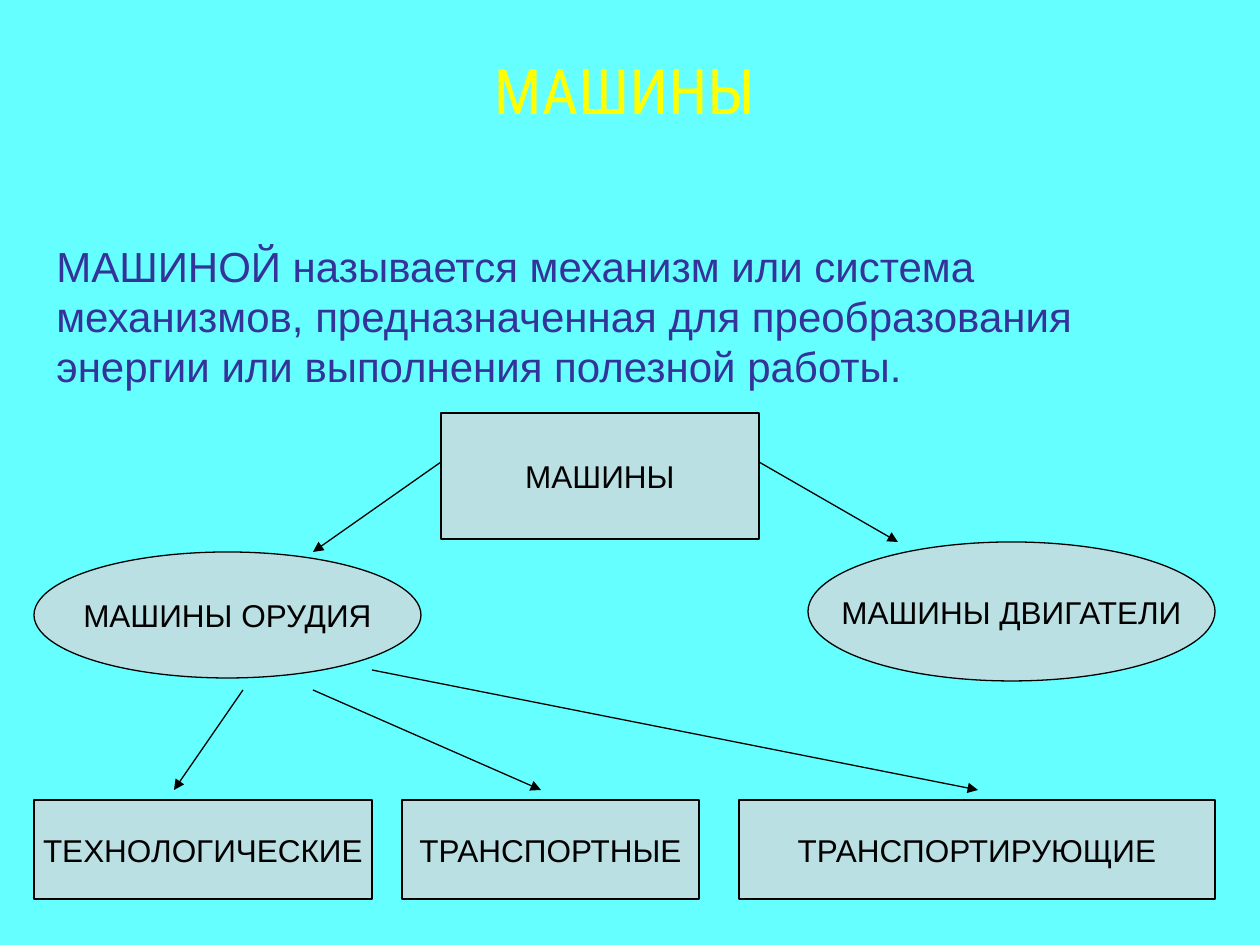
from dataclasses import dataclass

from lxml import etree
from pptx import Presentation
from pptx.dml.color import RGBColor
from pptx.enum.shapes import MSO_CONNECTOR, MSO_SHAPE
from pptx.enum.text import MSO_ANCHOR, PP_ALIGN
from pptx.oxml.ns import qn
from pptx.util import Emu, Pt

RECT = MSO_SHAPE.RECTANGLE
OVAL = MSO_SHAPE.OVAL
STRAIGHT = MSO_CONNECTOR.STRAIGHT
TOP = MSO_ANCHOR.TOP
MIDDLE = MSO_ANCHOR.MIDDLE
LEFT = PP_ALIGN.LEFT
CENTER = PP_ALIGN.CENTER

EMU_PER_PX = 914400 / 126
COLORS = {
    "background": "66FFFF",
    "title": "FFFF00",
    "definition": "333399",
    "node": "BBE0E3",
    "ink": "000000",
}
BODY_FONT = "Arial"
TITLE_FONT = "Roboto Condensed"
LINE_WIDTH = Pt(0.75)
ROW_TOP, ROW_HEIGHT = 800, 99


@dataclass(frozen=True)
class Node:
    text: str
    shape: MSO_SHAPE
    x: int
    y: int
    w: int
    h: int


@dataclass(frozen=True)
class Arrow:
    x1: int
    y1: int
    x2: int
    y2: int


NODES = [
    Node("МАШИНЫ", RECT, 441, 413, 318, 126),
    Node("МАШИНЫ ОРУДИЯ", OVAL, 34, 552, 387, 126),
    Node("МАШИНЫ ДВИГАТЕЛИ", OVAL, 808, 542, 407, 139),
    Node("ТЕХНОЛОГИЧЕСКИЕ", RECT, 34, ROW_TOP, 338, ROW_HEIGHT),
    Node("ТРАНСПОРТНЫЕ", RECT, 402, ROW_TOP, 297, ROW_HEIGHT),
    Node("ТРАНСПОРТИРУЮЩИЕ", RECT, 739, ROW_TOP, 476, ROW_HEIGHT),
]
ARROWS = [
    Arrow(441, 462, 313, 552),
    Arrow(759, 462, 898, 542),
    Arrow(243, 690, 174, 790),
    Arrow(313, 690, 541, 790),
    Arrow(372, 670, 978, 790),
]


def px(value: int) -> Emu:
    return Emu(round(value * EMU_PER_PX))


def rgb(name: str) -> RGBColor:
    return RGBColor.from_string(COLORS[name])


def write(shape, text: str, size: int, color: str, font: str = BODY_FONT,
          align: PP_ALIGN = CENTER, anchor: MSO_ANCHOR = MIDDLE,
          wrap: bool = False) -> None:
    tf = shape.text_frame
    tf.word_wrap = wrap
    tf.vertical_anchor = anchor
    p = tf.paragraphs[0]
    p.alignment = align
    r = p.add_run()
    r.text = text
    r.font.name = font
    r.font.size = Pt(size)
    r.font.color.rgb = rgb(color)


def draw_node(s, node: Node) -> None:
    sp = s.shapes.add_shape(node.shape, px(node.x), px(node.y), px(node.w), px(node.h))
    sp.shadow.inherit = False
    sp.fill.solid()
    sp.fill.fore_color.rgb = rgb("node")
    sp.line.color.rgb = rgb("ink")
    sp.line.width = LINE_WIDTH
    write(sp, node.text, 18, "ink")


def draw_arrow(s, arrow: Arrow) -> None:
    line = s.shapes.add_connector(
        STRAIGHT, px(arrow.x1), px(arrow.y1), px(arrow.x2), px(arrow.y2))
    line.line.color.rgb = rgb("ink")
    line.line.width = LINE_WIDTH
    sp_pr = line._element.spPr
    etree.SubElement(sp_pr.find(qn("a:ln")), qn("a:tailEnd"), type="triangle")
    etree.SubElement(sp_pr, qn("a:effectLst"))


def main() -> None:
    prs = Presentation()
    prs.slide_width, prs.slide_height = px(1260), px(945)
    s = prs.slides.add_slide(prs.slide_layouts[6])
    s.background.fill.solid()
    s.background.fill.fore_color.rgb = rgb("background")

    definition = s.shapes.add_textbox(px(44), px(234), px(1171), px(214))
    write(definition,
          "МАШИНОЙ называется механизм или система механизмов, предназначенная "
          "для преобразования энергии или выполнения полезной работы.",
          24, "definition", align=LEFT, anchor=TOP, wrap=True)
    title = s.shapes.add_textbox(px(74), px(45), px(1101), px(139))
    write(title, "МАШИНЫ", 36, "title", font=TITLE_FONT, anchor=TOP)

    for node in NODES:
        draw_node(s, node)
    for arrow in ARROWS:
        draw_arrow(s, arrow)
    prs.save("out.pptx")


if __name__ == "__main__":
    main()
